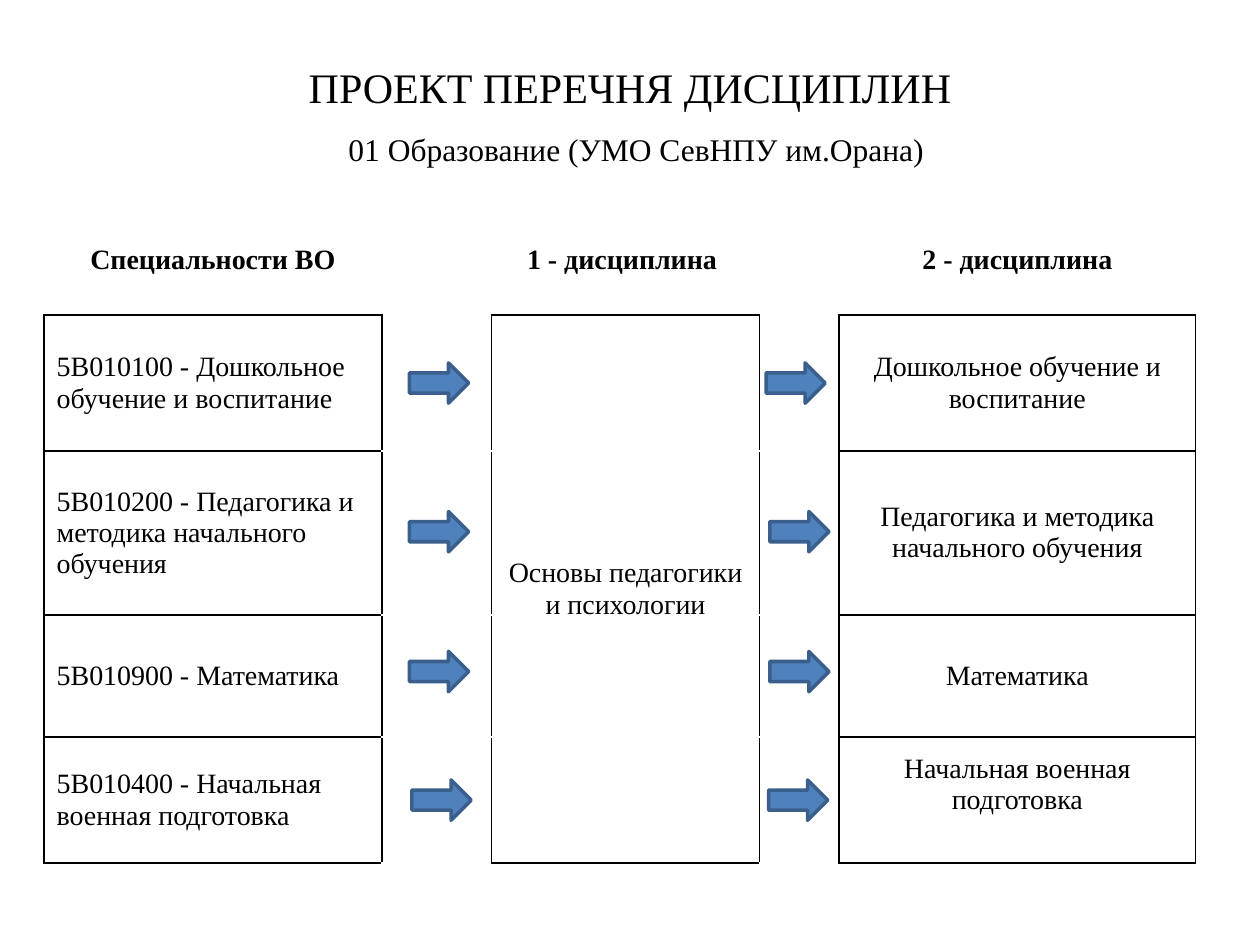
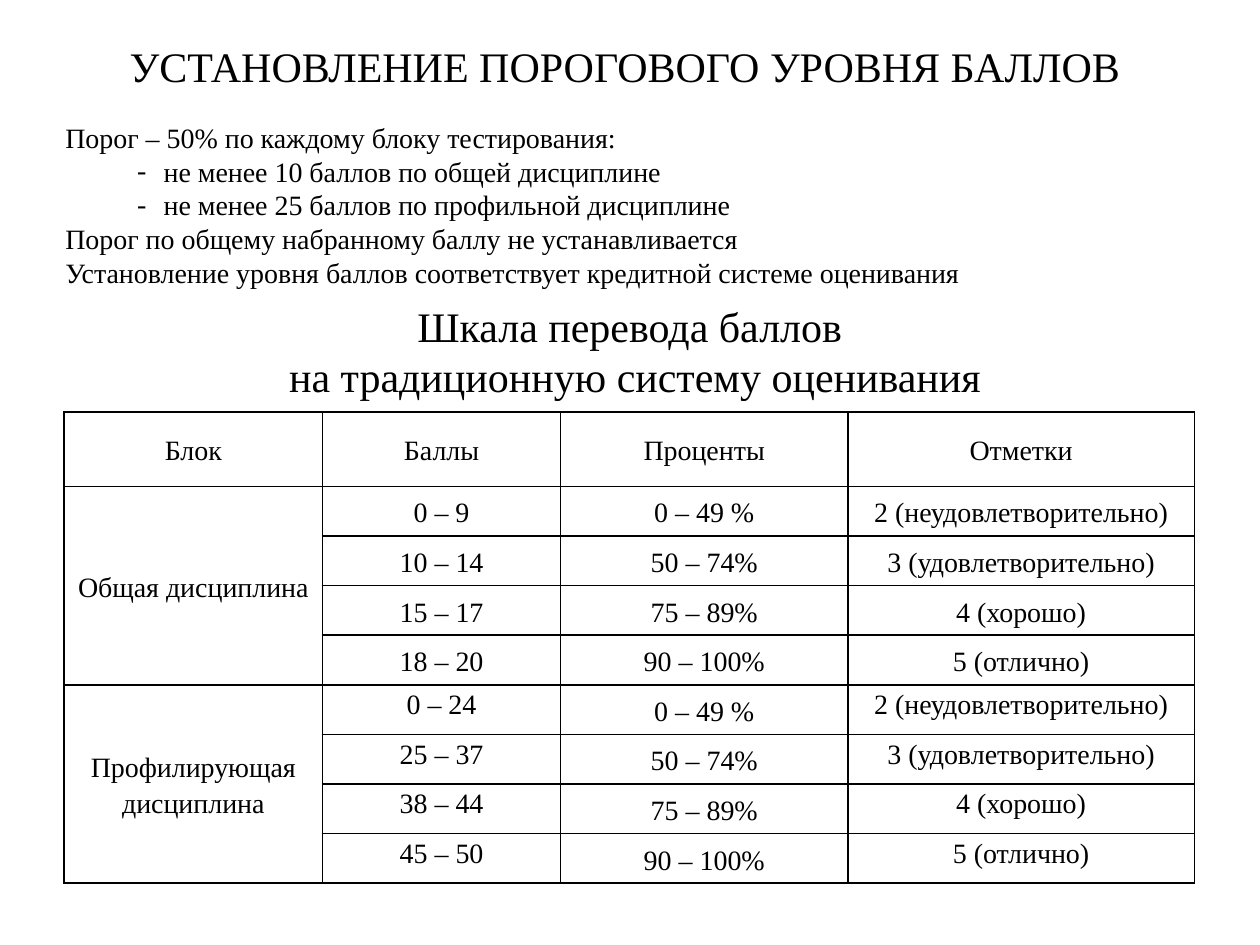
from lxml.etree import SubElement
from pptx import Presentation
from pptx.dml.color import RGBColor
from pptx.enum.shapes import MSO_SHAPE
from pptx.enum.text import MSO_ANCHOR, PP_ALIGN
from pptx.oxml.ns import qn
from pptx.util import Inches, Pt

BLACK = RGBColor(0x00, 0x00, 0x00)
WHITE = RGBColor(0xFF, 0xFF, 0xFF)
ARROW_FILL = RGBColor(0x4F, 0x81, 0xBD)
ARROW_LINE = RGBColor(0x3A, 0x5F, 0x8C)

TITLE = {"name": "Times New Roman", "size": Pt(24), "bold": False}
SUBTITLE = TITLE | {"size": Pt(18)}
BODY = TITLE | {"size": Pt(16)}
HEADING = BODY | {"bold": True}
CENTER = {"alignment": PP_ALIGN.CENTER}
CENTER_LOOSE = CENTER | {"line_spacing": 1.15}
LEFT = {"alignment": PP_ALIGN.LEFT}

BOXED = dict.fromkeys("LRTB", BLACK)
HIDDEN = dict.fromkeys("LRTB", WHITE)
UNDERLINED = HIDDEN | {"B": BLACK}
SIDES = BOXED | {"T": WHITE, "B": WHITE}

SPECIALTIES = [
    ("5В010100 - Дошкольное обучение и воспитание", "Дошкольное обучение и воспитание"),
    ("5B010200 - Педагогика и методика начального обучения",
     "Педагогика и методика начального обучения"),
    ("5B010900 - Математика", "Математика"),
    ("5B010400 - Начальная военная подготовка", "Начальная военная подготовка"),
]
ARROWS = [(3.25, 6.08, 2.88), (3.25, 6.11, 4.06), (3.25, 6.11, 5.17), (3.27, 6.1, 6.19)]

SCORES = {
    "Общая дисциплина": ["0 – 9", "10 – 14", "15 – 17", "18 – 20"],
    "Профилирующая дисциплина": ["0 – 24", "25 – 37", "38 – 44", "45 – 50"],
}
PERCENTS = ["0 – 49 %", "50 – 74%", "75 – 89%", "90 – 100%"]
GRADES = ["2 (неудовлетворительно)", "3 (удовлетворительно)", "4 (хорошо)", "5 (отлично)"]


def apply(target, values):
    for name, value in values.items():
        setattr(target, name, value)


def write(para, text, font, layout):
    para.text = text
    apply(para, layout)
    for span in para.runs:
        apply(span.font, font)
        span.font.color.rgb = BLACK


def indent(para, left, first=0.0, bullet=None):
    props = para._p.get_or_add_pPr()
    props.set("marL", str(Inches(left)))
    props.set("indent", str(Inches(first)))
    if bullet:
        SubElement(props, qn("a:buFont"), typeface="Times New Roman")
        SubElement(props, qn("a:buChar"), char=bullet)


def add_text(page, place, lines, anchor=MSO_ANCHOR.TOP):
    box = page.shapes.add_textbox(*map(Inches, place))
    frame = box.text_frame
    apply(frame, {"word_wrap": True, "vertical_anchor": anchor})
    paras = [frame.paragraphs[0]] + [frame.add_paragraph() for _ in lines[1:]]
    for para, line in zip(paras, lines):
        write(para, *line)
    return paras


def add_grid(page, place, widths, heights):
    frame = page.shapes.add_table(len(heights), len(widths), *map(Inches, place))
    table = frame.table
    apply(table, {"first_row": False, "horz_banding": False})
    for column, width in zip(table.columns, widths):
        column.width = Inches(width)
    for row, height in zip(table.rows, heights):
        row.height = Inches(height)
    return table


def style_cell(cell, borders):
    props = cell._tc.get_or_add_tcPr()
    for side, color in borders.items():
        line = SubElement(props, qn(f"a:ln{side}"), w=str(Pt(1)))
        fill = SubElement(line, qn("a:solidFill"))
        SubElement(fill, qn("a:srgbClr"), val=str(color))
    cell.fill.background()


def fill_cell(cell, text, font, layout, anchor=MSO_ANCHOR.MIDDLE):
    write(cell.text_frame.paragraphs[0], text, font, layout)
    cell.vertical_anchor = anchor


def add_arrow(page, left, top):
    arrow = page.shapes.add_shape(
        MSO_SHAPE.RIGHT_ARROW, Inches(left), Inches(top), Inches(0.47), Inches(0.32))
    arrow.shadow.inherit = False
    arrow.fill.solid()
    arrow.fill.fore_color.rgb = ARROW_FILL
    arrow.line.color.rgb = ARROW_LINE
    arrow.line.width = Pt(2)


def build_disciplines(page):
    paras = add_text(page, (1.14, 0.44, 7.72, 0.98), [
        ("ПРОЕКТ ПЕРЕЧНЯ ДИСЦИПЛИН", TITLE, CENTER),
        ("01 Образование (УМО СевНПУ им.Орана)", SUBTITLE, CENTER | {"space_before": Pt(10)}),
    ])
    indent(paras[1], 0.1)

    table = add_grid(page, (0.35, 1.62, 9.13, 5.21),
                     (2.68, 0.87, 2.13, 0.63, 2.83), (0.88, 1.08, 1.3, 0.97, 1))
    for row in range(5):
        for column in range(5):
            is_gap = column % 2 == 1
            if row == 0:
                borders = HIDDEN if is_gap else UNDERLINED
            else:
                borders = SIDES if is_gap else BOXED
            style_cell(table.cell(row, column), borders)

    headings = ["Специальности ВО", "1 - дисциплина ", "2 - дисциплина"]
    for column, heading in zip((0, 2, 4), headings):
        fill_cell(table.cell(0, column), heading, HEADING, CENTER)
    for row, (specialty, discipline) in enumerate(SPECIALTIES, 1):
        fill_cell(table.cell(row, 0), specialty, BODY, LEFT)
        fill_cell(table.cell(row, 4), discipline, BODY, CENTER)
    table.cell(4, 4).margin_bottom = Inches(0.3)
    table.cell(1, 2).merge(table.cell(4, 2))
    fill_cell(table.cell(1, 2), "Основы педагогики и психологии", BODY, CENTER)

    for left, right, top in ARROWS:
        add_arrow(page, left, top)
        add_arrow(page, right, top)


def build_thresholds(page):
    add_text(page, (0.46, 0.27, 9, 0.5),
             [("УСТАНОВЛЕНИЕ ПОРОГОВОГО УРОВНЯ БАЛЛОВ", TITLE, CENTER)], MSO_ANCHOR.MIDDLE)
    rules = [
        "Порог – 50% по каждому блоку тестирования:",
        "не менее 10 баллов по общей дисциплине",
        "не менее 25 баллов по профильной дисциплине",
        "Порог по общему набранному баллу не устанавливается",
        "Установление уровня баллов соответствует кредитной системе оценивания",
    ]
    paras = add_text(page, (0.42, 0.91, 9.21, 1.48), [(rule, BODY, LEFT) for rule in rules])
    for para in paras[1:3]:
        indent(para, 0.78, -0.21, "-")
    add_text(page, (0.54, 2.33, 9, 0.91),
             [("Шкала перевода баллов \vна традиционную систему оценивания", TITLE, CENTER)],
             MSO_ANCHOR.MIDDLE)

    header_height, table_height = 0.59, 3.74
    score_height = (table_height - header_height) / 8
    table = add_grid(page, (0.51, 3.27, 8.98, table_height),
                     (2.05, 1.89, 2.28, 2.75), [header_height] + [score_height] * 8)
    margins = {"margin_left": Inches(0.07), "margin_right": Inches(0.07),
               "margin_top": 0, "margin_bottom": 0}
    for cell in table.iter_cells():
        style_cell(cell, BOXED)
        apply(cell, margins)

    for column, heading in enumerate(["Блок", "Баллы", "Проценты", "Отметки"]):
        fill_cell(table.cell(0, column), heading, BODY, CENTER_LOOSE)
    anchors = (MSO_ANCHOR.MIDDLE, MSO_ANCHOR.TOP)
    for block, ((name, scores), anchor) in enumerate(zip(SCORES.items(), anchors)):
        first = 1 + 4 * block
        table.cell(first, 0).merge(table.cell(first + 3, 0))
        fill_cell(table.cell(first, 0), name, BODY, CENTER_LOOSE)
        for row, (score, percent, grade) in enumerate(zip(scores, PERCENTS, GRADES), first):
            fill_cell(table.cell(row, 1), score, BODY, CENTER_LOOSE, anchor)
            fill_cell(table.cell(row, 2), percent, BODY, CENTER_LOOSE)
            fill_cell(table.cell(row, 3), grade, BODY, CENTER_LOOSE, anchor)


def main():
    deck = Presentation()
    apply(deck, {"slide_width": Inches(10), "slide_height": Inches(7.5)})
    for build in (build_disciplines, build_thresholds):
        build(deck.slides.add_slide(deck.slide_layouts[6]))
    deck.save("out.pptx")


if __name__ == "__main__":
    main()
